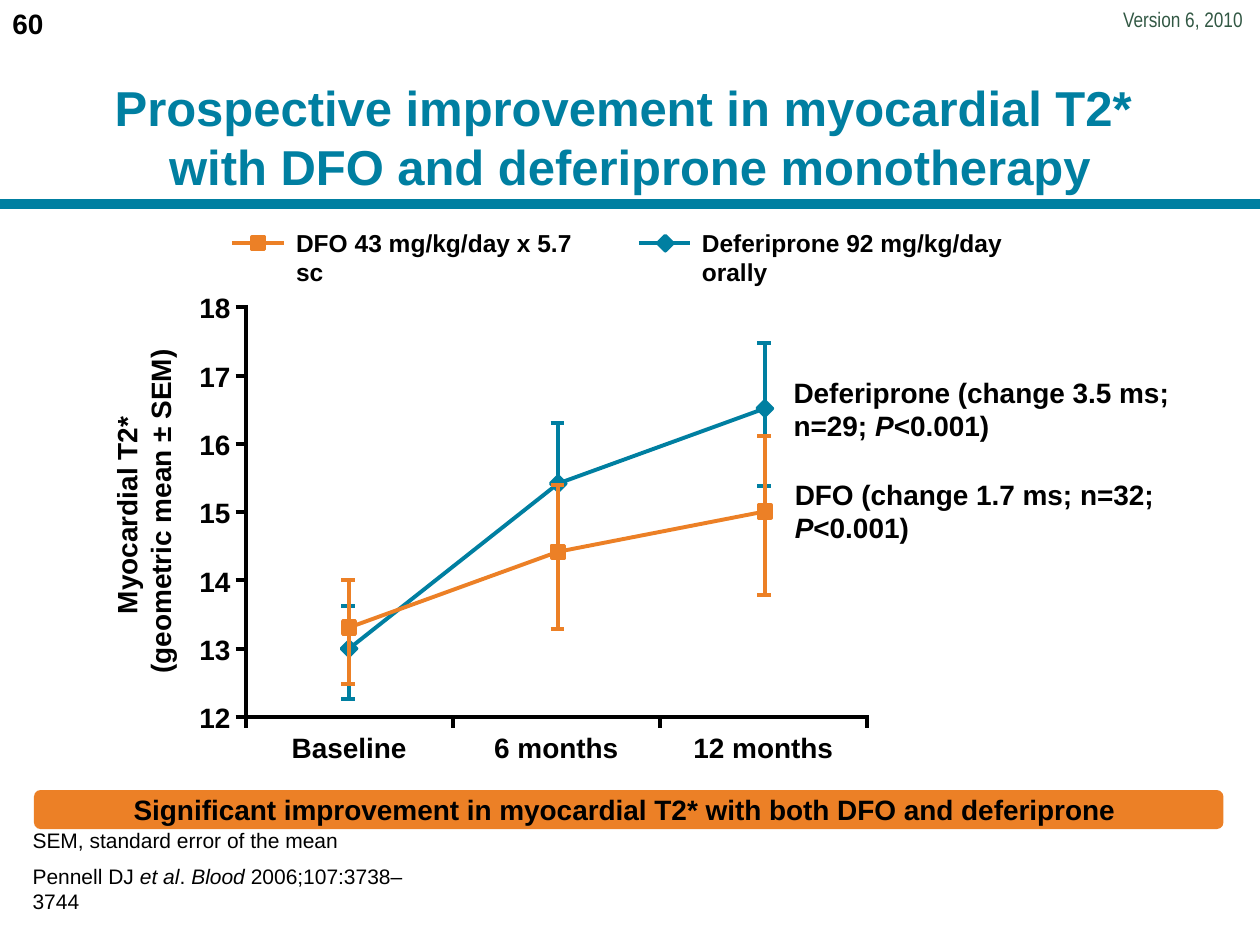
"""Build the slide on myocardial T2* improvement with DFO and deferiprone."""
from lxml.etree import SubElement
from pptx import Presentation
from pptx.dml.color import RGBColor
from pptx.enum.shapes import MSO_CONNECTOR, MSO_SHAPE as Preset
from pptx.enum.text import MSO_ANCHOR as Anchor, MSO_AUTO_SIZE as AutoSize, PP_ALIGN as Align
from pptx.oxml.ns import qn
from pptx.util import Inches, Pt

TEAL, ORANGE, BLACK, WHITE, GREEN = "007FA1", "EC8026", "000000", "FFFFFF", "325844"
rgb = RGBColor.from_string


def write(frame, paragraphs, size, align=Align.LEFT, color=BLACK, bold=True,
          anchor=Anchor.TOP, wrap=True, inset=None, font="Arial", gap=0):
    """Fill a text frame; every second run of a paragraph is italic."""
    frame.auto_size = AutoSize.NONE
    frame.word_wrap = wrap
    frame.vertical_anchor = anchor
    if inset is not None:
        frame.margin_left = frame.margin_right = Inches(inset)
        frame.margin_top = frame.margin_bottom = Inches(inset)
    for index, runs in enumerate(paragraphs):
        paragraph = frame.paragraphs[0] if index == 0 else frame.add_paragraph()
        paragraph.alignment = align
        paragraph.space_before, paragraph.space_after = Pt(0), Pt(gap)
        for position, words in enumerate(runs):
            for row, piece in enumerate(words.split("\n")):
                if row:
                    paragraph.add_line_break()
                run = paragraph.add_run()
                run.text = piece
                run.font.name, run.font.size, run.font.bold = font, Pt(size), bold
                run.font.italic = position % 2 == 1
                run.font.color.rgb = rgb(color)


def draw_line(x1, y1, x2, y2, color=BLACK, width=2.25):
    """Draw a straight line without a shadow."""
    connector = slide.shapes.add_connector(
        MSO_CONNECTOR.STRAIGHT, Inches(x1), Inches(y1), Inches(x2), Inches(y2))
    connector.line.color.rgb = rgb(color)
    connector.line.width = Pt(width)
    SubElement(connector._element.spPr, qn("a:effectLst"))


prs = Presentation()
prs.slide_width, prs.slide_height = Inches(10), Inches(7.5)
slide = prs.slides.add_slide(prs.slide_layouts[1])
shapes = slide.shapes

title = shapes.title
title.left, title.top, title.width, title.height = map(Inches, (0.5, 0.3, 9, 1.25))
write(title.text_frame,
      [["Prospective improvement in myocardial T2* \nwith DFO and deferiprone monotherapy"]],
      28, Align.CENTER, TEAL, anchor=Anchor.BOTTOM, inset=0)

deferiprone_legend = slide.placeholders[1]
dfo_legend = shapes.add_shape(Preset.RECTANGLE, 0, 0, 0, 0)
axis_title = shapes.add_shape(Preset.RECTANGLE, 0, 0, 0, 0)
axis_title.rotation = 270
conclusion = shapes.add_shape(Preset.ROUNDED_RECTANGLE, 0, 0, 0, 0)
for panel, box, fill in (
    (deferiprone_legend, (5.57, 1.81, 2.94, 0.23), WHITE),
    (dfo_legend, (2.35, 1.81, 2.44, 0.23), WHITE),
    (axis_title, (-0.28, 3.74, 2.84, 0.64), WHITE),
    (conclusion, (0.27, 6.27, 9.44, 0.31), ORANGE),
):
    panel.left, panel.top, panel.width, panel.height = map(Inches, box)
    panel.fill.solid()
    panel.fill.fore_color.rgb = rgb(fill)
    panel.line.fill.background()
    if not panel.is_placeholder:
        panel.shadow.inherit = False

write(deferiprone_legend.text_frame, [["Deferiprone 92 mg/kg/day orally"]], 14, inset=0)
legend_format = deferiprone_legend.text_frame.paragraphs[0]._p.get_or_add_pPr()
legend_format.set("marL", "0")
legend_format.set("indent", "0")
SubElement(legend_format, qn("a:buNone"))
write(dfo_legend.text_frame, [["DFO 43 mg/kg/day x 5.7 sc"]], 14, inset=0)
write(axis_title.text_frame, [["Myocardial T2* \n(geometric mean ± SEM)"]], 16, Align.CENTER)
write(conclusion.text_frame,
      [["Significant improvement in myocardial T2* with both DFO and deferiprone "]],
      16, Align.CENTER, anchor=Anchor.MIDDLE)

for box, paragraphs, size, options in (
    ((8.8, 0, 1.2, 0.3), [["Version 6, 2010 "]], 12,
     dict(align=Align.RIGHT, color=GREEN, bold=False, font="Arial Narrow")),
    ((0, 0, 2.33, 0.52), [["60"]], 16, {}),
    ((6.2, 2.93, 3.25, 0.64),
     [["Deferiprone (change 3.5 ms;"], ["n=29; ", "P", "<0.001)"]], 16, {}),
    ((6.21, 3.74, 3.07, 0.64), [["DFO (change 1.7 ms; n=32; ", "P", "<0.001)"]], 16, {}),
    ((0.16, 6.7, 3.49, 0.6),
     [["SEM, standard error of the mean"],
      ["Pennell DJ ", "et al", ". ", "Blood", " 2006;107:3738–3744"]],
     12, dict(bold=False, anchor=Anchor.BOTTOM, gap=6)),
):
    note = shapes.add_textbox(*map(Inches, box))
    write(note.text_frame, paragraphs, size, **options)

draw_line(0, 1.62, 10, 1.62, TEAL, 6)

AXIS_LEFT, AXIS_RIGHT, AXIS_TOP, AXIS_BOTTOM = 1.95, 6.88, 2.44, 5.69
LOW, HIGH = 12, 18
unit = (AXIS_BOTTOM - AXIS_TOP) / (HIGH - LOW)
visits = ["Baseline", "6 months", "12 months"]
visit_width = (AXIS_RIGHT - AXIS_LEFT) / len(visits)

draw_line(AXIS_LEFT, AXIS_TOP - 0.02, AXIS_LEFT, AXIS_BOTTOM)
draw_line(AXIS_LEFT, AXIS_BOTTOM, AXIS_RIGHT + 0.02, AXIS_BOTTOM)
axis_labels = []
for value in range(LOW, HIGH + 1):
    y = AXIS_BOTTOM - (value - LOW) * unit
    draw_line(AXIS_LEFT - 0.08, y, AXIS_LEFT, y)
    axis_labels.append((str(value), 1.58, y - 0.13, 0.25))
for index in range(len(visits) + 1):
    x = AXIS_LEFT + index * visit_width
    draw_line(x, AXIS_BOTTOM, x, AXIS_BOTTOM + 0.09)
for index, visit in enumerate(visits):
    center = AXIS_LEFT + (index + 0.5) * visit_width
    axis_labels.append((visit, center - 0.55, 5.8, 1.1))
for label, left, top, width in axis_labels:
    tick_label = shapes.add_textbox(Inches(left), Inches(top), Inches(width), Inches(0.27))
    write(tick_label.text_frame, [[label]], 16, Align.CENTER, wrap=False, inset=0)

for color, legend_x, half, corners, results in (
    (TEAL, 5.28, 0.06, [(0, -1), (1, 0), (0, 1), (-1, 0)],
     [(13.0, 12.26, 13.62), (15.42, 14.42, 16.3), (16.52, 15.38, 17.48)]),
    (ORANGE, 2.05, 0.05, [(-1, -1), (1, -1), (1, 1), (-1, 1)],
     [(13.31, 12.48, 14.01), (14.42, 13.29, 15.4), (15.01, 13.79, 16.12)]),
):
    points = []
    for x, result in zip((2.77, 4.43, 6.07), results):
        mean, lower, upper = (AXIS_BOTTOM - (value - LOW) * unit for value in result)
        points.append((x, mean))
        draw_line(x, upper, x, lower, color)
        for end in (upper, lower):
            draw_line(x - 0.06, end, x + 0.05, end, color)
    path_points = [(Inches(x), Inches(y)) for x, y in points]
    builder = shapes.build_freeform(*path_points[0])
    builder.add_line_segments(path_points[1:], close=False)
    trend = builder.convert_to_shape()
    trend.fill.background()
    trend.line.color.rgb = rgb(color)
    trend.line.width = Pt(2.25)
    trend.shadow.inherit = False

    draw_line(legend_x - 0.21, 1.93, legend_x + 0.2, 1.93, color)
    for x, y in points + [(legend_x, 1.93)]:
        outline = [(Inches(x + dx * half), Inches(y + dy * half)) for dx, dy in corners]
        builder = shapes.build_freeform(*outline[0])
        builder.add_line_segments(outline[1:], close=True)
        marker = builder.convert_to_shape()
        marker.fill.solid()
        marker.fill.fore_color.rgb = rgb(color)
        marker.line.color.rgb = rgb(color)
        marker.line.width = Pt(2)
        marker.shadow.inherit = False

prs.save("out.pptx")
